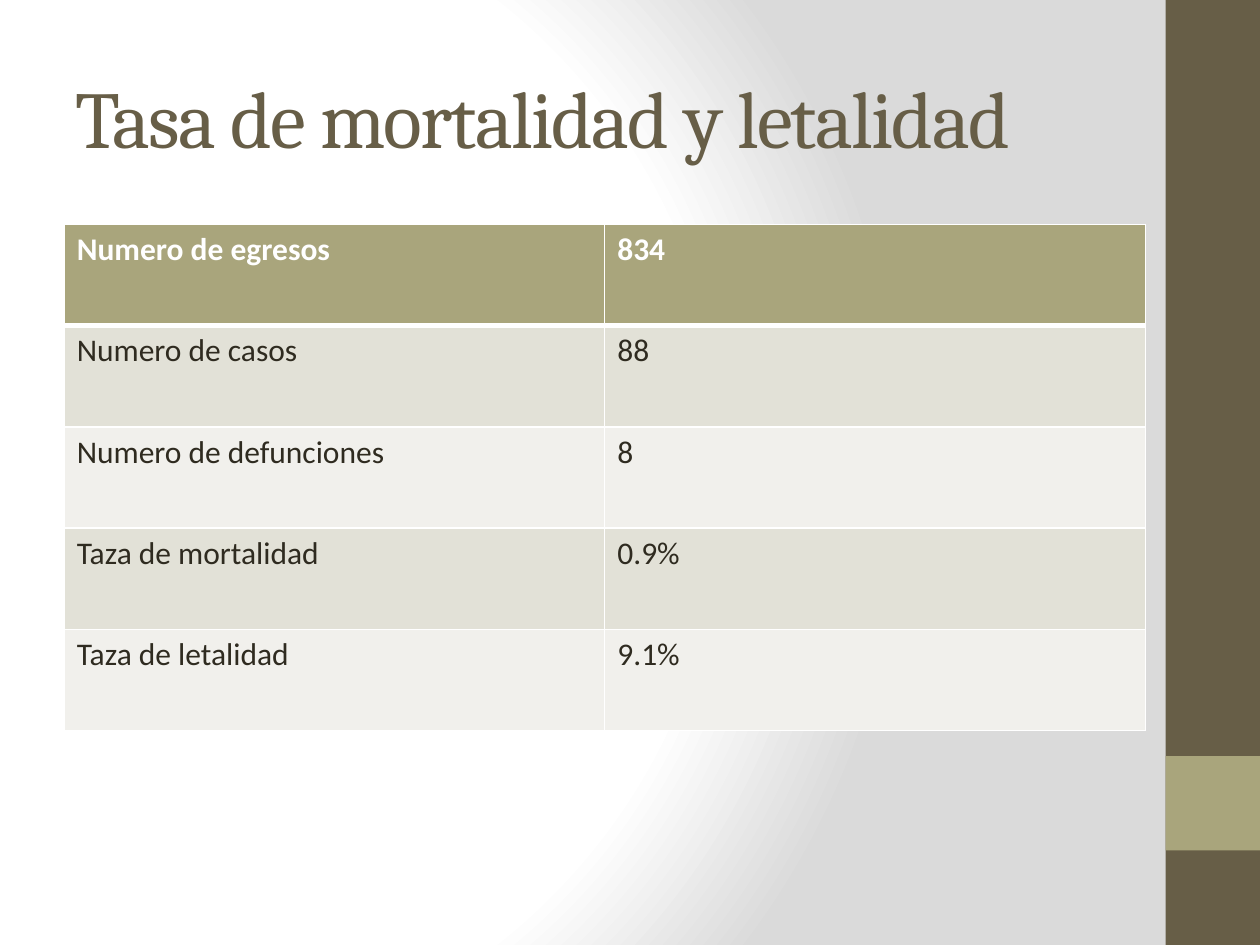
from typing import NamedTuple

from lxml import etree
from pptx import Presentation
from pptx.dml.color import RGBColor
from pptx.enum.shapes import MSO_SHAPE
from pptx.enum.text import MSO_ANCHOR, PP_ALIGN
from pptx.oxml import parse_xml
from pptx.oxml.ns import nsdecls, qn
from pptx.util import Inches, Pt

RECTANGLE = MSO_SHAPE.RECTANGLE
MIDDLE = MSO_ANCHOR.MIDDLE
LEFT = PP_ALIGN.LEFT

WHITE = RGBColor(0xFF, 0xFF, 0xFF)
GREY = RGBColor(0xDA, 0xDA, 0xDA)
BROWN = RGBColor(0x67, 0x5E, 0x47)
OLIVE = RGBColor(0xA9, 0xA5, 0x7C)
INK = RGBColor(0x2F, 0x2B, 0x20)
BANDS = (RGBColor(0xE2, 0xE1, 0xD7), RGBColor(0xF1, 0xF0, 0xEC))


class Block(NamedTuple):
    top: float
    height: float
    color: RGBColor


class Indicator(NamedTuple):
    label: str
    value: str


SIDEBAR = (Block(0, 7.5, BROWN), Block(6, 0.75, OLIVE))
INDICATORS = (
    Indicator("Numero de egresos", "834"),
    Indicator("Numero de casos", "88"),
    Indicator("Numero de defunciones", "8"),
    Indicator("Taza de mortalidad", "0.9%"),
    Indicator("Taza de letalidad", "9.1%"),
)


def paint_background(slide) -> None:
    slide.background.fill.solid()
    properties = slide.element.find(".//" + qn("p:bgPr"))
    stops = "".join(
        f'<a:gs pos="{percent * 1000}"><a:srgbClr val="{color}"/></a:gs>'
        for percent, color in ((0, WHITE), (75, WHITE), (100, GREY))
    )
    gradient = parse_xml(
        f'<a:gradFill {nsdecls("a")} rotWithShape="1"><a:gsLst>{stops}</a:gsLst>'
        '<a:path path="circle">'
        '<a:fillToRect l="20000" t="50000" r="100000" b="50000"/>'
        "</a:path></a:gradFill>"
    )
    properties.replace(properties.find(qn("a:solidFill")), gradient)


def add_block(slide, block: Block) -> None:
    shape = slide.shapes.add_shape(
        RECTANGLE, Inches(9.25), Inches(block.top), Inches(0.75), Inches(block.height)
    )
    shape.shadow.inherit = False
    shape.fill.solid()
    shape.fill.fore_color.rgb = block.color
    shape.line.fill.background()


def write_title(slide, text: str) -> None:
    title = slide.shapes.title
    title.left, title.top = Inches(0.5), Inches(0.3)
    title.width, title.height = Inches(8.33), Inches(1.25)
    title.text_frame.text = text
    title.text_frame.vertical_anchor = MIDDLE
    paragraph = title.text_frame.paragraphs[0]
    paragraph.alignment = LEFT
    paragraph.font.name = "Cambria"
    paragraph.font.size = Pt(46)
    paragraph.font.color.rgb = BROWN
    paragraph.runs[0].font._element.set("spc", "-100")


def set_border(cell, side: str, points: int) -> None:
    properties = cell._tc.get_or_add_tcPr()
    line = etree.SubElement(properties, qn(f"a:ln{side}"), w=str(Pt(points)))
    fill = etree.SubElement(line, qn("a:solidFill"))
    etree.SubElement(fill, qn("a:srgbClr"), val=str(WHITE))


def fill_cell(cell, text: str, row: int) -> None:
    is_header = row == 0
    for side in "LRTB":
        is_divider = (row, side) in ((0, "B"), (1, "T"))
        set_border(cell, side, 3 if is_divider else 1)
    cell.fill.solid()
    cell.fill.fore_color.rgb = OLIVE if is_header else BANDS[(row - 1) % 2]
    cell.text = text
    font = cell.text_frame.paragraphs[0].font
    font.name = "Calibri"
    font.size = Pt(18)
    font.bold = is_header
    font.color.rgb = WHITE if is_header else INK


def add_indicators(slide, indicators: tuple[Indicator, ...]) -> None:
    table = slide.shapes.add_table(
        len(indicators), 2, Inches(0.51), Inches(1.78), Inches(8.58), Inches(4.02)
    ).table
    for row, indicator in enumerate(indicators):
        for column, text in enumerate(indicator):
            fill_cell(table.cell(row, column), text, row)


def main() -> None:
    presentation = Presentation()
    presentation.slide_width, presentation.slide_height = Inches(10), Inches(7.5)
    slide = presentation.slides.add_slide(presentation.slide_layouts[5])
    paint_background(slide)
    for block in SIDEBAR:
        add_block(slide, block)
    write_title(slide, "Tasa de mortalidad y letalidad")
    add_indicators(slide, INDICATORS)
    presentation.save("out.pptx")


if __name__ == "__main__":
    main()
